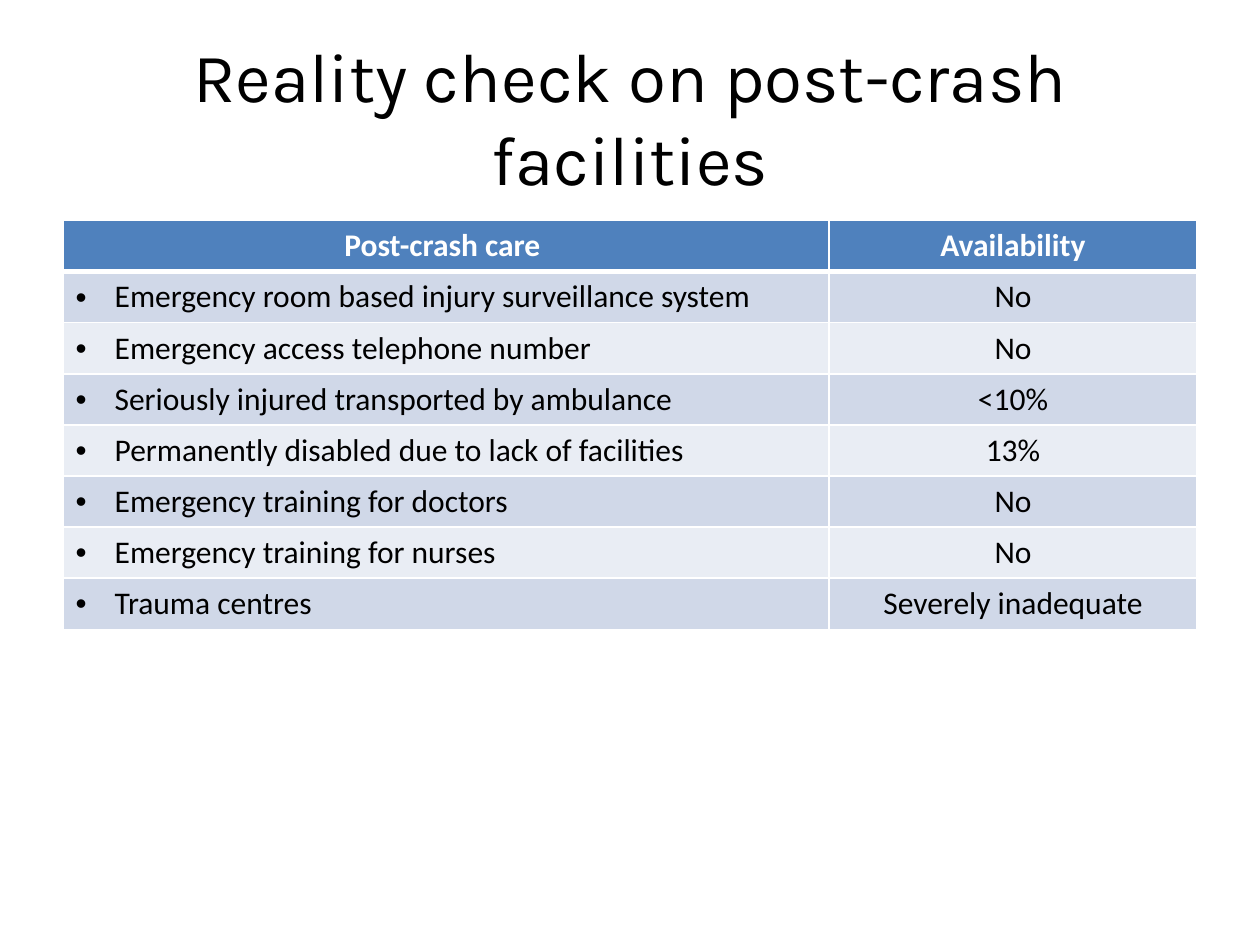
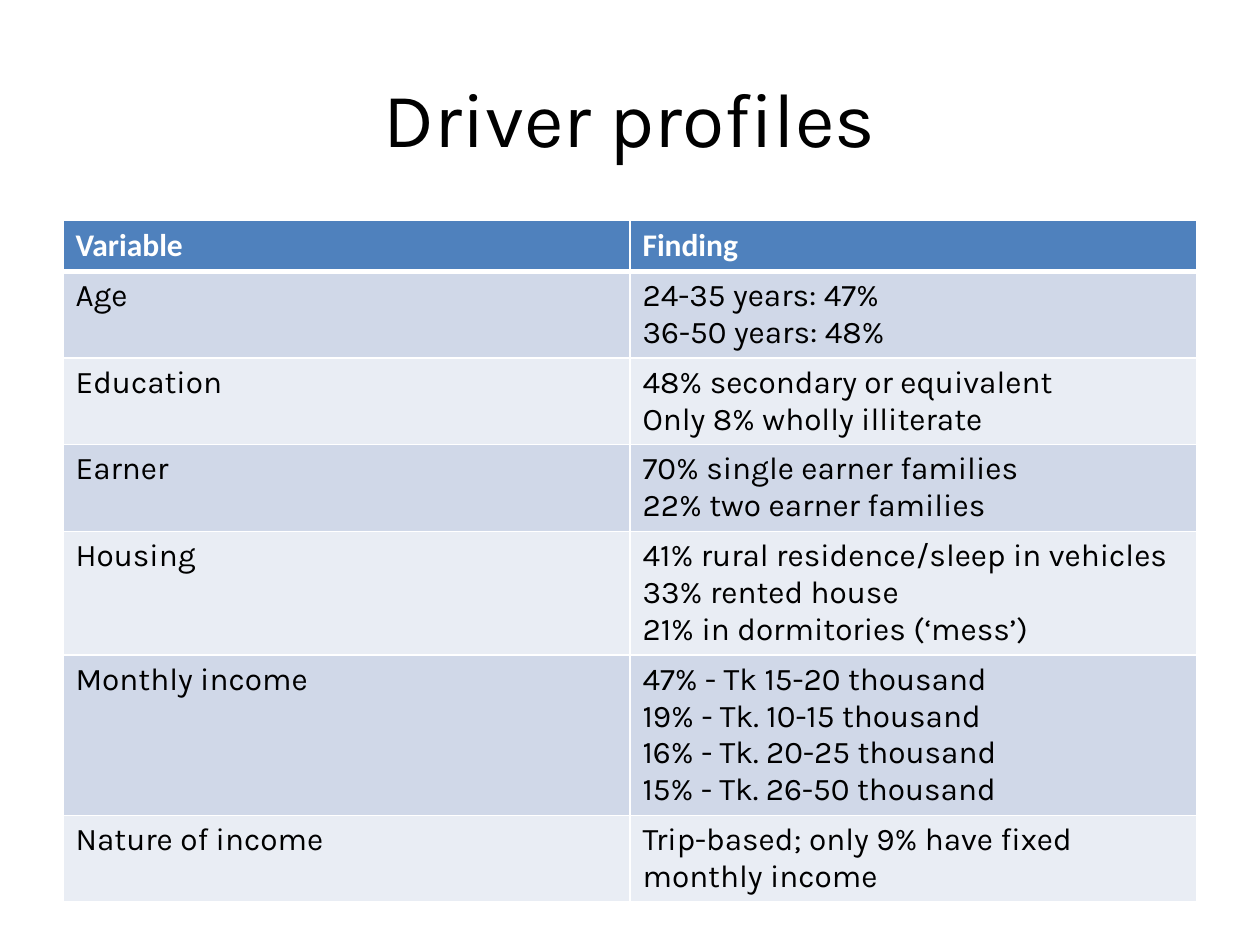
import pptx
import pptx.dml.color
import pptx.enum.text
import pptx.oxml
import pptx.oxml.ns
import pptx.util
import lxml.etree

Inches = pptx.util.Inches
Pt = pptx.util.Pt
ALIGN = pptx.enum.text.PP_ALIGN
ANCHOR = pptx.enum.text.MSO_ANCHOR
TITLE_ONLY = 5

CARE_ROWS = [
    ("Post-crash care ", "Availability"),
    ("Emergency room based injury surveillance system", "No"),
    ("Emergency access telephone number", "No"),
    ("Seriously injured transported by ambulance", "<10%"),
    ("Permanently disabled due to lack of facilities", "13%"),
    ("Emergency training for doctors", "No"),
    ("Emergency training for nurses", "No"),
    ("Trauma centres", "Severely inadequate"),
]
PROFILE_ROWS = [
    ("Variable", "Finding"),
    ("Age", "24-35 years: 47%\n36-50 years: 48%"),
    ("Education", "48% secondary or equivalent\nOnly 8% wholly illiterate"),
    ("Earner", "70% single earner families\n22% two earner families"),
    ("Housing", "41% rural residence/sleep in vehicles\n33% rented house\n"
                "21% in dormitories (‘mess’)"),
    ("Monthly income", "47% - Tk 15-20 thousand\n19% - Tk. 10-15 thousand\n"
                       "16% - Tk. 20-25 thousand\n15% - Tk. 26-50 thousand"),
    ("Nature of income", "Trip-based; only 9% have fixed monthly income"),
]


def colour(value):
    return pptx.dml.color.RGBColor.from_string(value)


def apply(target, formats):
    for name, value in formats.items():
        setattr(target, name, value)


class Deck:
    ink, paper, accent = "000000", "FFFFFF", "4F81BD"
    bands = ("D0D8E8", "E9EDF4")
    heading_font, table_font = "Karla", "Calibri"
    left, width = Inches(0.5), Inches(9)
    row_height = Inches(3.24) // 8
    line_height, cell_padding = Inches(0.29), Inches(0.1)

    def __init__(self):
        self.presentation = pptx.Presentation()
        apply(self.presentation, {"slide_width": Inches(10),
                                  "slide_height": Inches(7.5)})
        self.slide = None

    def add_slide(self, heading, size):
        layout = self.presentation.slide_layouts[TITLE_ONLY]
        self.slide = self.presentation.slides.add_slide(layout)
        fill = self.slide.background.fill
        fill.solid()
        fill.fore_color.rgb = colour(self.paper)
        title = self.slide.shapes.title
        apply(title, {"left": self.left, "top": Inches(0.3),
                      "width": self.width, "height": Inches(1.25)})
        apply(title.text_frame, {
            "text": heading, "word_wrap": True,
            "vertical_anchor": ANCHOR.MIDDLE,
            "auto_size": pptx.enum.text.MSO_AUTO_SIZE.NONE})
        paragraph = title.text_frame.paragraphs[0]
        paragraph.alignment = ALIGN.CENTER
        self.font(paragraph, self.heading_font, size, self.ink)

    def font(self, paragraph, name, size, ink, bold=False):
        for run in paragraph.runs:
            apply(run.font, {"name": name, "size": Pt(size), "bold": bold})
            run.font.color.rgb = colour(ink)

    def table(self, rows, widths, body_font, header_align, body_aligns,
              bulleted=False):
        frame = self.slide.shapes.add_table(
            len(rows), len(widths), self.left, Inches(1.75), self.width,
            self.row_height * len(rows))
        grid = frame.table
        for column, width in zip(grid.columns, widths):
            column.width = Inches(width)
        for index, texts in enumerate(rows):
            lines = max(text.count("\n") + 1 for text in texts)
            grid.rows[index].height = max(
                self.row_height, self.cell_padding + self.line_height * lines)
            header = index == 0
            fill = self.accent if header else self.bands[(index - 1) % 2]
            for position, text in enumerate(texts):
                cell = grid.cell(index, position)
                cell.text = text
                self.borders(cell, 3 if index == 1 else 1, 3 if header else 1)
                cell.fill.solid()
                cell.fill.fore_color.rgb = colour(fill)
                for paragraph in cell.text_frame.paragraphs:
                    if header:
                        paragraph.alignment = header_align
                        self.font(paragraph, self.table_font, 18, self.paper,
                                  True)
                    else:
                        paragraph.alignment = body_aligns[position]
                        self.font(paragraph, body_font, 18, self.ink)
                        if bulleted and position == 0:
                            self.bullet(paragraph)

    def borders(self, cell, top, bottom):
        properties = cell._tc.get_or_add_tcPr()
        weights = {"a:lnL": 1, "a:lnR": 1, "a:lnT": top, "a:lnB": bottom}
        qn = pptx.oxml.ns.qn
        for tag, weight in weights.items():
            line = lxml.etree.SubElement(properties, qn(tag), w=str(Pt(weight)))
            fill = lxml.etree.SubElement(line, qn("a:solidFill"))
            lxml.etree.SubElement(fill, qn("a:srgbClr"), val=self.paper)

    def bullet(self, paragraph):
        properties = paragraph._p.get_or_add_pPr()
        indent = Inches(0.31)
        properties.set("marL", str(indent))
        properties.set("indent", str(-indent))
        qn = pptx.oxml.ns.qn
        lxml.etree.SubElement(properties, qn("a:buFont"), typeface="Arial")
        lxml.etree.SubElement(properties, qn("a:buChar"), char="•")


def main():
    deck = Deck()
    deck.add_slide("Reality check on post-crash facilities", 39.6)
    deck.table(CARE_ROWS, (6.08, 2.92), deck.table_font, ALIGN.CENTER,
               (ALIGN.LEFT, ALIGN.CENTER), bulleted=True)
    deck.add_slide("Driver profiles", 44)
    deck.table(PROFILE_ROWS, (4.5, 4.5), deck.heading_font, ALIGN.LEFT,
               (ALIGN.LEFT, ALIGN.LEFT))
    deck.presentation.save("out.pptx")


if __name__ == "__main__":
    main()
